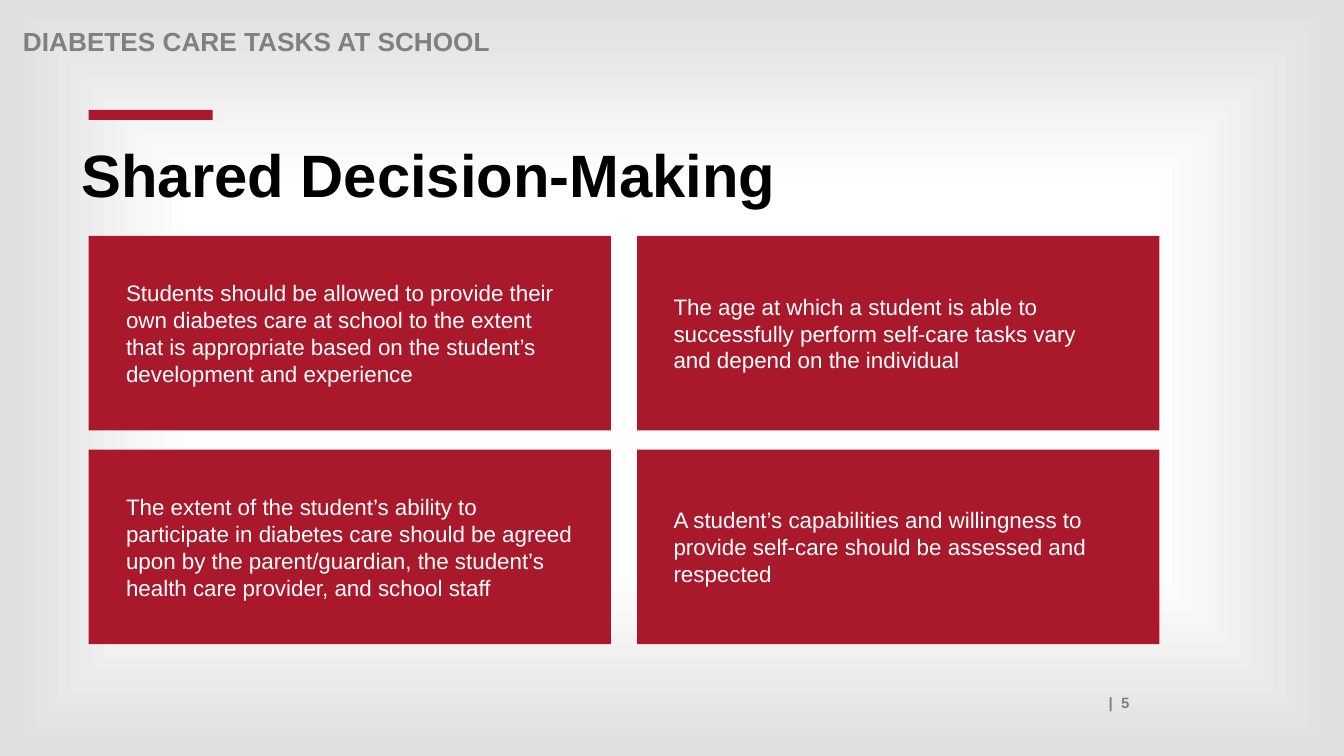
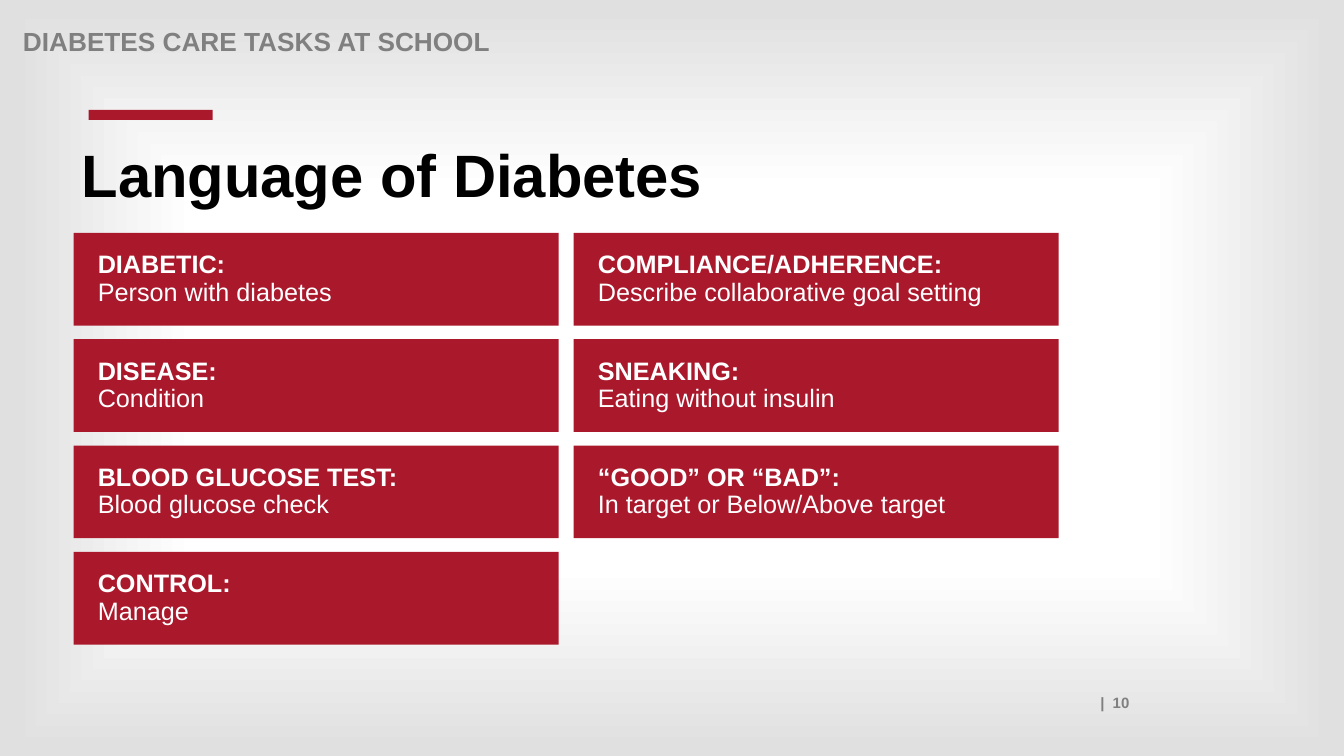
from pptx import Presentation
from pptx.dml.color import RGBColor
from pptx.enum.shapes import MSO_SHAPE as Shape
from pptx.enum.text import MSO_ANCHOR as Anchor, PP_ALIGN as Align
from pptx.oxml import parse_xml
from pptx.oxml.ns import nsdecls, qn
from pptx.util import Inches, Pt

RED, GREY, BLACK, WHITE = "AA182C", "808080", "000000", "FFFFFF"
FONT = "Arial"
HEADER = "DIABETES CARE TASKS AT SCHOOL"


def block(slide, x, y, w, h):
    box = slide.shapes.add_shape(
        Shape.RECTANGLE, Inches(x), Inches(y), Inches(w), Inches(h))
    box.shadow.inherit = False
    box.fill.solid()
    box.fill.fore_color.rgb = RGBColor.from_string(RED)
    box.line.fill.background()
    return box


def write(box, text, size, color, bold=None, left=0.1, right=0.1, top=0.05):
    frame = box.text_frame
    frame.word_wrap = True
    frame.margin_left, frame.margin_right = Inches(left), Inches(right)
    frame.margin_top = Inches(top)
    para = frame.paragraphs[0]
    para.alignment = Align.LEFT
    para.font.name, para.font.size, para.font.bold = FONT, Pt(size), bold
    para.font.color.rgb = RGBColor.from_string(color)
    if text:
        para.add_run().text = text
    return para


prs = Presentation()
prs.slide_width, prs.slide_height = Inches(13.33), Inches(7.5)

master = prs.slide_master
master.background.fill.solid()
back = master.element.find(".//" + qn("p:bgPr"))
stops = "".join(
    f'<a:gs pos="{pos}000"><a:srgbClr val="{color}"/></a:gs>'
    for pos, color in ((12, WHITE), (50, WHITE), (98, "E0E0E0")))
back.replace(back[0], parse_xml(
    f'<a:gradFill {nsdecls("a")} rotWithShape="1"><a:gsLst>{stops}</a:gsLst>'
    '<a:path path="shape"><a:fillToRect l="50000" t="50000" r="50000" b="50000"/>'
    '</a:path></a:gradFill>'))

slides = []
for title, number in (("Shared Decision-Making", 5), ("Language of Diabetes", 10)):
    slide = prs.slides.add_slide(prs.slide_layouts[6])
    slides.append(slide)
    block(slide, 0.88, 1.09, 1.23, 0.1)
    head = slide.shapes.add_textbox(Inches(0.13), Inches(0.24), Inches(11), Inches(0.28))
    write(head, HEADER, 18.7, GREY, True).line_spacing = 0.9
    name = slide.shapes.add_textbox(Inches(0.73), Inches(1.37), Inches(11.03), Inches(1.3))
    write(name, title, 42.7, BLACK, True, left=0.08, top=0.08).line_spacing = 0.9
    foot = slide.shapes.add_textbox(Inches(1.21), Inches(6.83), Inches(10.09), Inches(0.28))
    write(foot, f"|  {number}", 10.7, GREY, True).alignment = Align.RIGHT

shared, language = slides

points = (
    "Students should be allowed to provide their own diabetes care at school to the "
    "extent that is appropriate based on the student’s development and experience",
    "The age at which a student is able to successfully perform self-care tasks vary "
    "and depend on the individual",
    "The extent of the student’s ability to participate in diabetes care should be "
    "agreed upon by the parent/guardian, the student’s health care provider, and "
    "school staff",
    "A student’s capabilities and willingness to provide self-care should be assessed "
    "and respected",
)
insets = ((0.37, 0.37), (0.36, 0.44))
for i, text in enumerate(points):
    row, col = divmod(i, 2)
    card = block(shared, 0.88 + col * 5.44, 2.34 + row * 2.12, 5.18, 1.93)
    left, right = insets[col]
    write(card, text, 16, WHITE, left=left, right=right)
    card.text_frame.vertical_anchor = Anchor.MIDDLE

terms = (
    ("DIABETIC:", "Person with diabetes"),
    ("COMPLIANCE/ADHERENCE:", "Describe collaborative goal setting"),
    ("DISEASE:", "Condition"),
    ("SNEAKING:", "Eating without insulin"),
    ("BLOOD GLUCOSE TEST:", "Blood glucose check"),
    ("“GOOD” OR “BAD”:", "In target or Below/Above target"),
    ("CONTROL:", "Manage"),
)
for i, (term, better) in enumerate(terms):
    row, col = divmod(i, 2)
    card = block(language, 0.73 + col * 4.96, 2.31 + row * 1.055, 4.81, 0.92)
    para = write(card, "", 18, WHITE, left=0.24)
    card.text_frame.vertical_anchor = Anchor.MIDDLE
    para.line_spacing = 0.9
    label = para.add_run()
    label.text = term
    label.font.bold = True
    para.add_line_break()
    para.add_run().text = better

prs.save("out.pptx")
